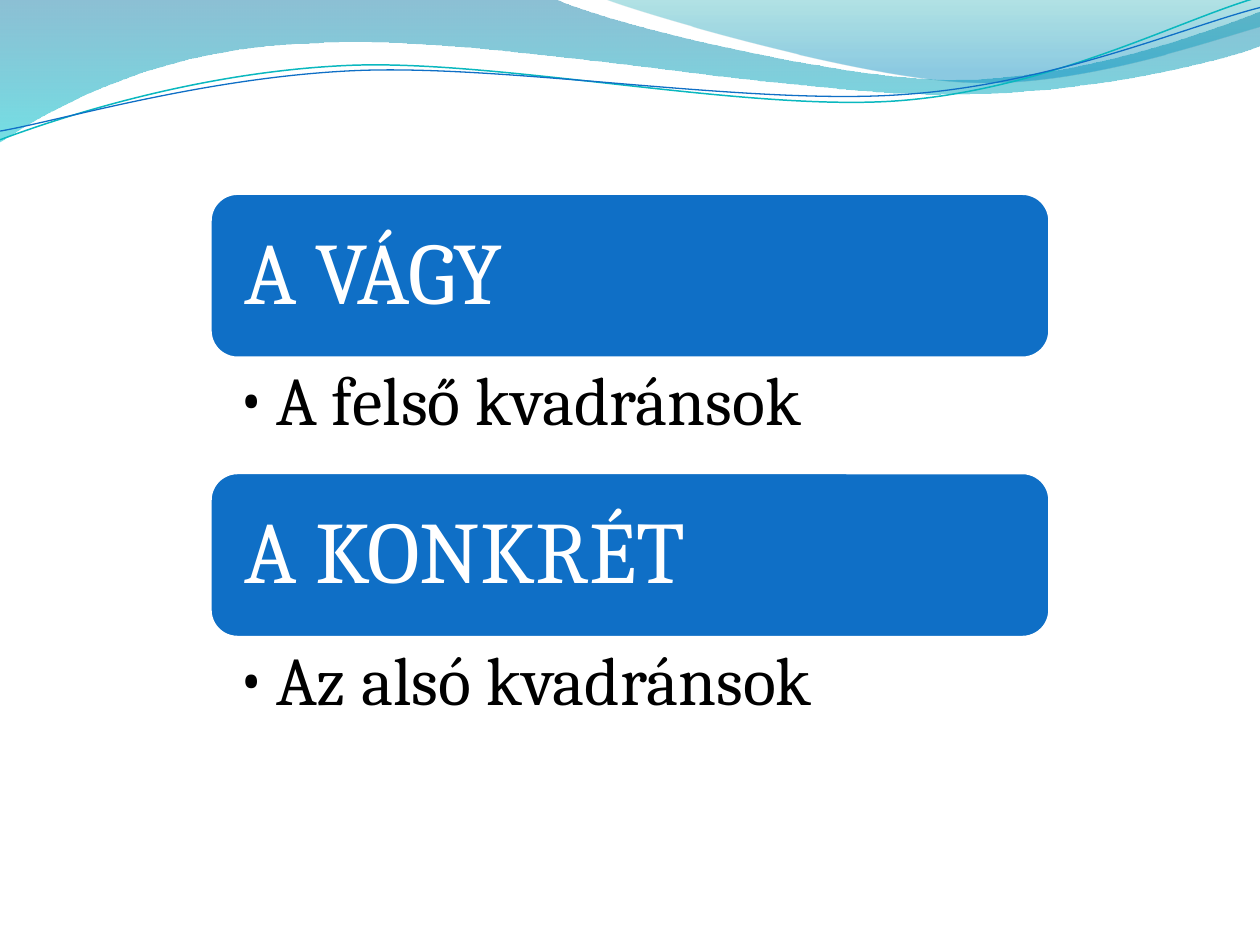
from lxml import etree
from pptx import Presentation
from pptx.dml.color import RGBColor
from pptx.enum.shapes import MSO_SHAPE
from pptx.enum.text import MSO_ANCHOR, PP_ALIGN
from pptx.oxml.ns import qn
from pptx.util import Pt

ROUND = MSO_SHAPE.ROUNDED_RECTANGLE
MIDDLE = MSO_ANCHOR.MIDDLE
TOP = MSO_ANCHOR.TOP
LEFT = PP_ALIGN.LEFT

BLUE = RGBColor(0x0F, 0x6F, 0xC6)
TEAL = RGBColor(0x0A, 0xB8, 0xBF)
WHITE = RGBColor(0xFF, 0xFF, 0xFF)
BLACK = RGBColor(0x00, 0x00, 0x00)
DEEP = RGBColor(0x00, 0x74, 0xA1)
AQUA = RGBColor(0x00, 0xC6, 0xCF)
GREEN = RGBColor(0x00, 0xA1, 0xA9)
SKY = RGBColor(0x00, 0x8B, 0xBF)
FONT = "Cambria"

deck = Presentation()
deck.slide_width, deck.slide_height = Pt(720), Pt(540)
slide = deck.slides.add_slide(deck.slide_layouts[6])
shapes = slide.shapes


def add_wave(start, parts, close):
    spots = [part[i:i + 2] for part in parts for i in range(0, len(part), 2)]
    pen = shapes.build_freeform(Pt(start[0]), Pt(start[1]))
    pen.add_line_segments([(Pt(x), Pt(y)) for x, y in spots], close=close)
    wave = pen.convert_to_shape()
    wave.shadow.inherit = False
    moves = iter(list(wave._element.iter(qn("a:lnTo"))))
    for part in parts:
        move = next(moves)
        if len(part) == 6:
            curve = etree.Element(qn("a:cubicBezTo"))
            move.addprevious(curve)
            for leg in (move, next(moves), next(moves)):
                curve.append(leg[0])
                leg.getparent().remove(leg)
    return wave


def set_text(frame, text, size, color, anchor):
    frame.word_wrap = True
    frame.vertical_anchor = anchor
    para = frame.paragraphs[0]
    para.text = text
    para.alignment = LEFT
    para.line_spacing = 0.9
    para.font.name = FONT
    para.font.size = Pt(size)
    para.font.color.rgb = color


bands = [
    ((0, 0),
     [(316.8, -0.7), (342.7, 12.2, 478, 45.4, 545.8, 45.4),
      (614.2, 45.4, 689.8, 18.7, 720, 6.5), (720.7, 25.9),
      (707.8, 31.7, 626.4, 54.7, 537.1, 54),
      (447.8, 54, 275, 20.2, 185, 24.5),
      (92.9, 25.9, 33.1, 59.8, -0.7, 81.4)],
     [(0, DEEP, 45), (1, AQUA, 55)]),
    ((344.9, -0.7),
     [(366.5, 7.9, 491, 44.6, 553.7, 46.8),
      (616.3, 49.7, 691.9, 23, 720, 15.1), (720, 0)],
     [(0, GREEN, 30), (0.8, SKY, 45)]),
]
for start, parts, stops in bands:
    band = add_wave(start, parts, True)
    band.line.fill.background()
    band.fill.gradient()
    band.fill.gradient_angle = 270
    for stop, (pos, color, alpha) in zip(band.fill.gradient_stops, stops):
        stop.position = pos
        stop.color.rgb = color
    tints = band._element.spPr.iter(qn("a:srgbClr"))
    for tint, (pos, color, alpha) in zip(tints, stops):
        etree.SubElement(tint, qn("a:alpha")).set("val", str(alpha * 1000))

lines = [
    ((0, 79.9),
     [(34.6, 67, 113.8, 41, 199.4, 37.4),
      (284.4, 33.8, 427, 64.1, 513.4, 57.6),
      (599.8, 51.1, 675.4, 10.8, 718.6, -1.4)], TEAL, 0.85),
    ((0, 74.9),
     [(33.8, 69.1, 118.1, 43.9, 203.8, 40.3),
      (290.2, 36.7, 429.8, 60.5, 516.2, 54),
      (601.9, 48.2, 677.5, 15.1, 720, 4.3)], BLUE, 0.75),
]
for start, parts, color, width in lines:
    line = add_wave(start, parts, False)
    line.fill.background()
    line.line.color.rgb = color
    line.line.width = Pt(width)

left, wide = Pt(120), Pt(480)
high, low = 94.3, 65.3
topics = [("A VÁGY", "A felső kvadránsok"),
          ("A KONKRÉT", "Az alsó kvadránsok")]
for row, (head, note) in enumerate(topics):
    top = 110.4 + row * (high + low)
    card = shapes.add_shape(ROUND, left, Pt(top), wide, Pt(high))
    card.shadow.inherit = False
    card.fill.solid()
    card.fill.fore_color.rgb = BLUE
    card.line.color.rgb = WHITE
    card.line.width = Pt(2)
    frame = card.text_frame
    frame.margin_left = frame.margin_right = Pt(15)
    frame.margin_top = frame.margin_bottom = Pt(15)
    set_text(frame, head, 50, WHITE, MIDDLE)

    frame = shapes.add_textbox(left, Pt(top + high), wide, Pt(low)).text_frame
    frame.margin_left, frame.margin_right = Pt(15.25), Pt(28)
    frame.margin_top = frame.margin_bottom = Pt(5)
    para = frame.paragraphs[0]
    para.level = 1
    props = para._p.get_or_add_pPr()
    props.set("marL", str(Pt(22.5)))
    props.set("indent", str(Pt(-22.5)))
    etree.SubElement(props, qn("a:buFont")).set("typeface", FONT)
    etree.SubElement(props, qn("a:buChar")).set("char", "•")
    set_text(frame, note, 39, BLACK, TOP)

deck.save("out.pptx")
